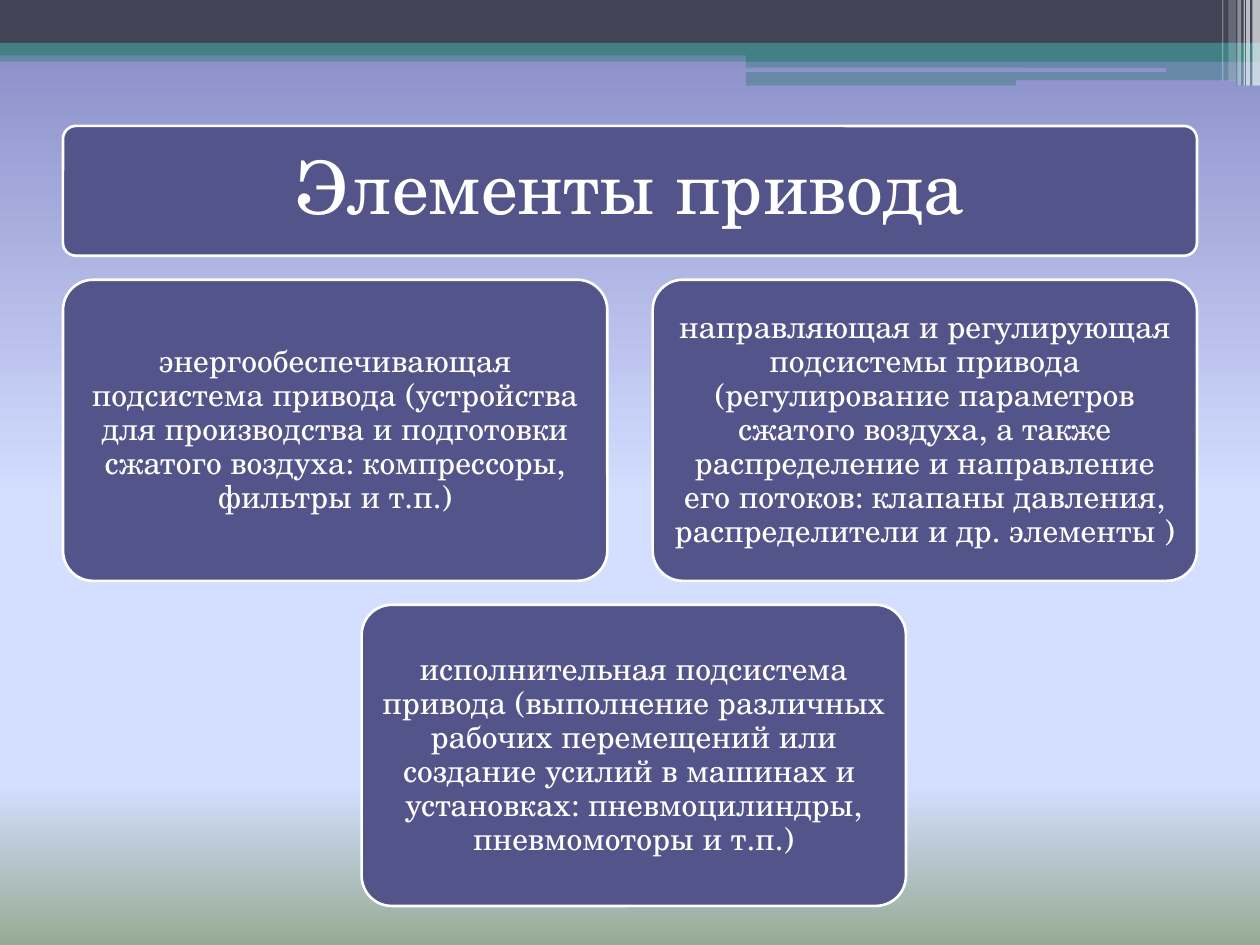
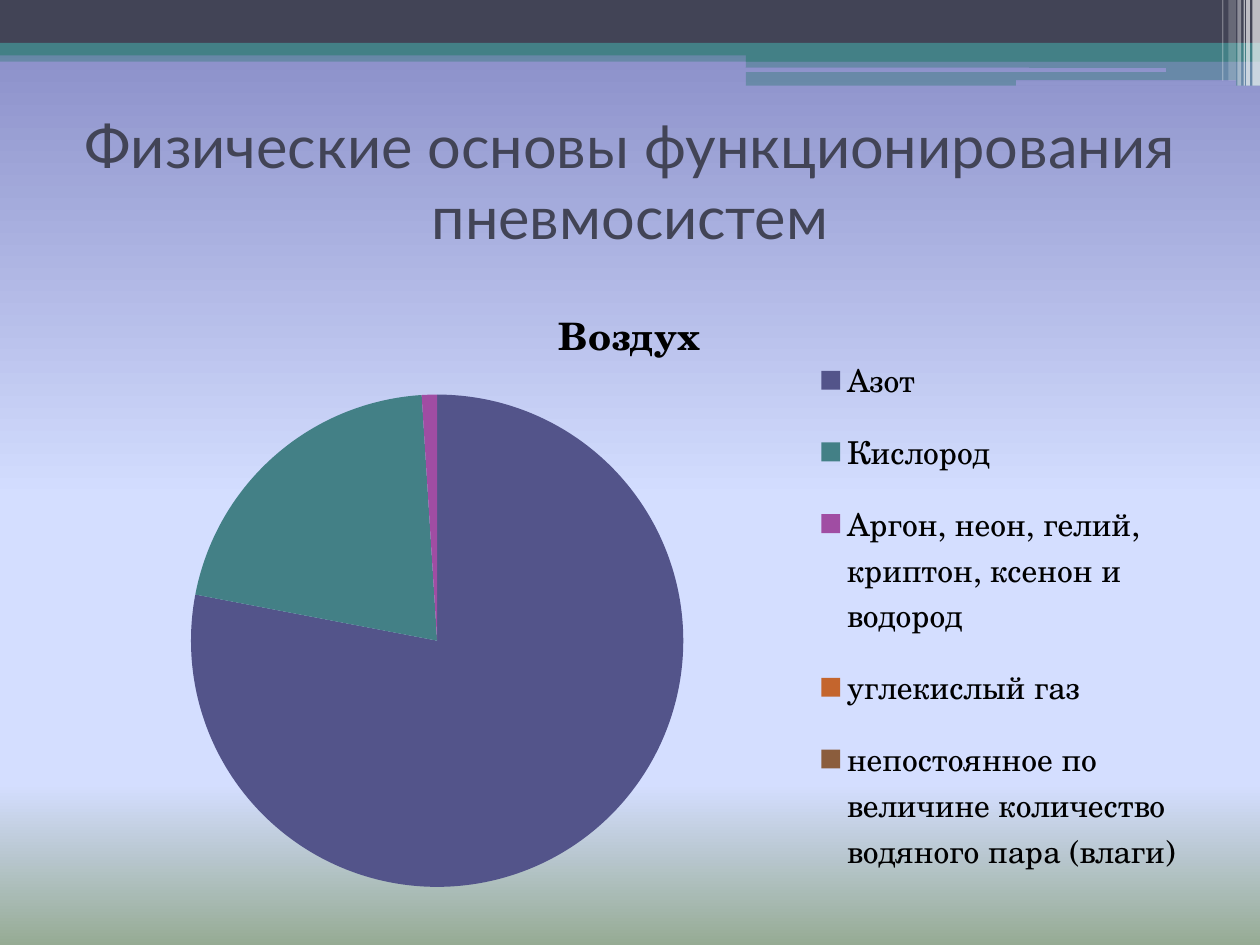
from lxml import etree
from pptx import Presentation
from pptx.chart.data import CategoryChartData
from pptx.dml.color import RGBColor
from pptx.enum.chart import XL_CHART_TYPE, XL_LEGEND_POSITION
from pptx.enum.shapes import MSO_SHAPE
from pptx.enum.text import MSO_ANCHOR, PP_ALIGN
from pptx.oxml.ns import qn
from pptx.util import Inches, Pt

RECT, ROUND = MSO_SHAPE.RECTANGLE, MSO_SHAPE.ROUNDED_RECTANGLE
PIE, RIGHT = XL_CHART_TYPE.PIE, XL_LEGEND_POSITION.RIGHT
MIDDLE, CENTER = MSO_ANCHOR.MIDDLE, PP_ALIGN.CENTER

DARK = RGBColor(0x42, 0x44, 0x56)
TEAL = RGBColor(0x43, 0x80, 0x86)
INDIGO = RGBColor(0x53, 0x54, 0x8A)
PURPLE = RGBColor(0xA0, 0x4D, 0xA3)
ORANGE = RGBColor(0xC4, 0x65, 0x2D)
BROWN = RGBColor(0x8B, 0x5D, 0x3D)
WHITE = RGBColor(0xFF, 0xFF, 0xFF)
BLACK = RGBColor(0, 0, 0)
SKY = [(0, "8488C4"), (53, "D4DEFF"), (83, "D4DEFF"), (100, "96AB94")]
SERIF, SANS = "TeX Gyre Schola", "Lato"

W, H = 10, 7.5
MARGIN = 0.05 * W
CONTENT_W = W - 2 * MARGIN


def add_box(slide, kind, x, y, w, h, color, alpha=100):
    sp = slide.shapes.add_shape(kind, Inches(x), Inches(y), Inches(w), Inches(h))
    sp.element.remove(sp.element.find(qn("p:style")))
    sp.shadow.inherit = False
    if color is None:
        sp.element.set("useBgFill", "1")
    else:
        sp.fill.solid()
        sp.fill.fore_color.rgb = color
    if alpha < 100:
        clr = sp.element.spPr.find(".//" + qn("a:srgbClr"))
        etree.SubElement(clr, qn("a:alpha"), val=str(alpha * 1000))
    return sp


def write(sp, text, size, font, color, inset, spacing=None):
    tf = sp.text_frame
    tf.text = text
    tf.word_wrap = True
    tf.vertical_anchor = MIDDLE
    tf.margin_left = tf.margin_right = Inches(inset)
    tf.margin_top = tf.margin_bottom = Inches(inset)
    p = tf.paragraphs[0]
    p.alignment = CENTER
    p.line_spacing = spacing
    r = p.runs[0]
    r.font.size, r.font.name = Pt(size), font
    r.font.color.rgb = color


prs = Presentation()
prs.slide_width, prs.slide_height = Inches(W), Inches(H)
master = prs.slide_master
title_only = prs.slide_layouts[5]
s = prs.slides.add_slide(title_only)

fill = master.background.fill
fill.gradient()
fill.gradient_angle = 270
stops = master.element.find(".//" + qn("p:bgPr") + "//" + qn("a:gsLst"))
for gs in list(stops):
    stops.remove(gs)
for pos, rgb in SKY:
    gs = etree.SubElement(stops, qn("a:gs"), pos=str(pos * 1000))
    etree.SubElement(gs, qn("a:srgbClr"), val=rgb)

bands = [
    (RECT, 0, 0.4, W, 0.09, TEAL, 50),
    (RECT, 0, 0, W, 0.34, DARK, 100),
    (RECT, 0, 0.34, W, 0.1, TEAL, 100),
    (RECT, 5.92, 0.39, 4.08, 0.1, TEAL, 100),
    (RECT, 5.92, 0.48, 4.08, 0.2, TEAL, 50),
    (ROUND, 5.91, 0.54, 3.35, 0.03, None, 100),
    (ROUND, 8.06, 0.64, 1.75, 0.04, None, 100),
]
stripes = [(9.94, 0.06, 0.68, 65), (9.89, 0.03, 0.68, 65), (9.87, 0.01, 0.68, 60),
           (9.82, 0.03, 0.68, 40), (9.75, 0.06, 0.64, 20), (9.7, 0.01, 0.64, 30)]
bands += [(RECT, x, 0, w, h, WHITE, alpha) for x, w, h, alpha in stripes]
for i, band in enumerate(bands):
    sp = add_box(s, *band)
    sp.element.nvSpPr.cNvPr.set("id", str(20 + i))
    master.shapes.element.insert(2 + i, sp.element)

BOX_W, BOX_H = 4.32, 2.39
ROW_1, ROW_2 = 2.22, 4.8
subsystems = [
    (MARGIN, ROW_1, "энергообеспечивающая подсистема привода (устройства для производства "
     "и подготовки сжатого воздуха: компрессоры, фильтры и т.п.)"),
    (2.87, ROW_2, "исполнительная подсистема привода (выполнение различных рабочих "
     "перемещений или создание усилий в машинах и  установках: пневмоцилиндры, "
     "пневмомоторы и т.п.)"),
    (W - MARGIN - BOX_W, ROW_1, "направляющая и регулирующая подсистемы привода "
     "(регулирование параметров сжатого воздуха, а также распределение "
     "и направление его потоков: клапаны давления, распределители и др. элементы )"),
]
heading = add_box(s, ROUND, MARGIN, 1, CONTENT_W, 1.03, INDIGO)
boxes = [heading]
for x, y, text in subsystems:
    sp = add_box(s, ROUND, x, y, BOX_W, BOX_H, INDIGO)
    write(sp, text, 18, SERIF, WHITE, 0.07, 0.9)
    boxes.append(sp)
for sp in boxes:
    sp.adjustments[0] = 0.1
    sp.line.color.rgb = WHITE
    sp.line.width = Pt(1.5)
s.shapes.element.insert(2, heading.element)
title = s.shapes.title
title.left, title.top = heading.left, heading.top
title.width, title.height = heading.width, heading.height
write(title, "Элементы привода", 42, SERIF, WHITE, 0.2, 0.9)

s = prs.slides.add_slide(title_only)
title = s.shapes.title
title.left, title.top = Inches(MARGIN), Inches(0.84)
title.width, title.height = Inches(CONTENT_W), Inches(1.18)
write(title, "Физические основы функционирования пневмосистем", 34, SANS, DARK, 0.05)

data = CategoryChartData()
data.categories = ["Азот", "Кислород", "Аргон, неон, гелий, криптон, ксенон и водород",
                   "углекислый газ",
                   "непостоянное по величине количество водяного пара (влаги)"]
data.add_series("Воздух", [78, 21, 1, 0, None])
chart = s.shapes.add_chart(PIE, Inches(MARGIN), Inches(2.18),
                           Inches(CONTENT_W), Inches(5.01), data).chart
chart.font.size, chart.font.name = Pt(18), SERIF
chart.font.color.rgb = BLACK
chart.has_title = True
chart.chart_title.text_frame.text = "Воздух"
font = chart.chart_title.text_frame.paragraphs[0].runs[0].font
font.size, font.name, font.bold = Pt(21.6), SERIF, True
font.color.rgb = BLACK
chart.has_legend = True
chart.legend.position = RIGHT
chart.legend.include_in_layout = False
plot = chart.plots[0]
plot.vary_by_categories = True
for i, color in enumerate([INDIGO, TEAL, PURPLE, ORANGE, BROWN]):
    point = plot.series[0].points[i]
    point.format.fill.solid()
    point.format.fill.fore_color.rgb = color

PLOT_AREA = [("layoutTarget", "inner"), ("xMode", "edge"), ("yMode", "edge"),
             ("x", "0.11"), ("y", "0.19"), ("w", "0.44"), ("h", "0.78")]
LEGEND = [("xMode", "edge"), ("yMode", "edge"),
          ("x", "0.65"), ("y", "0.09"), ("w", "0.35"), ("h", "0.9")]
for tag, index, settings in [("c:plotArea", 0, PLOT_AREA), ("c:legend", 1, LEGEND)]:
    part = chart.element.find(".//" + qn(tag))
    for old in part.findall(qn("c:layout")):
        part.remove(old)
    layout = etree.Element(qn("c:layout"))
    part.insert(index, layout)
    manual = etree.SubElement(layout, qn("c:manualLayout"))
    for name, val in settings:
        etree.SubElement(manual, qn("c:" + name), val=val)

prs.save("out.pptx")
